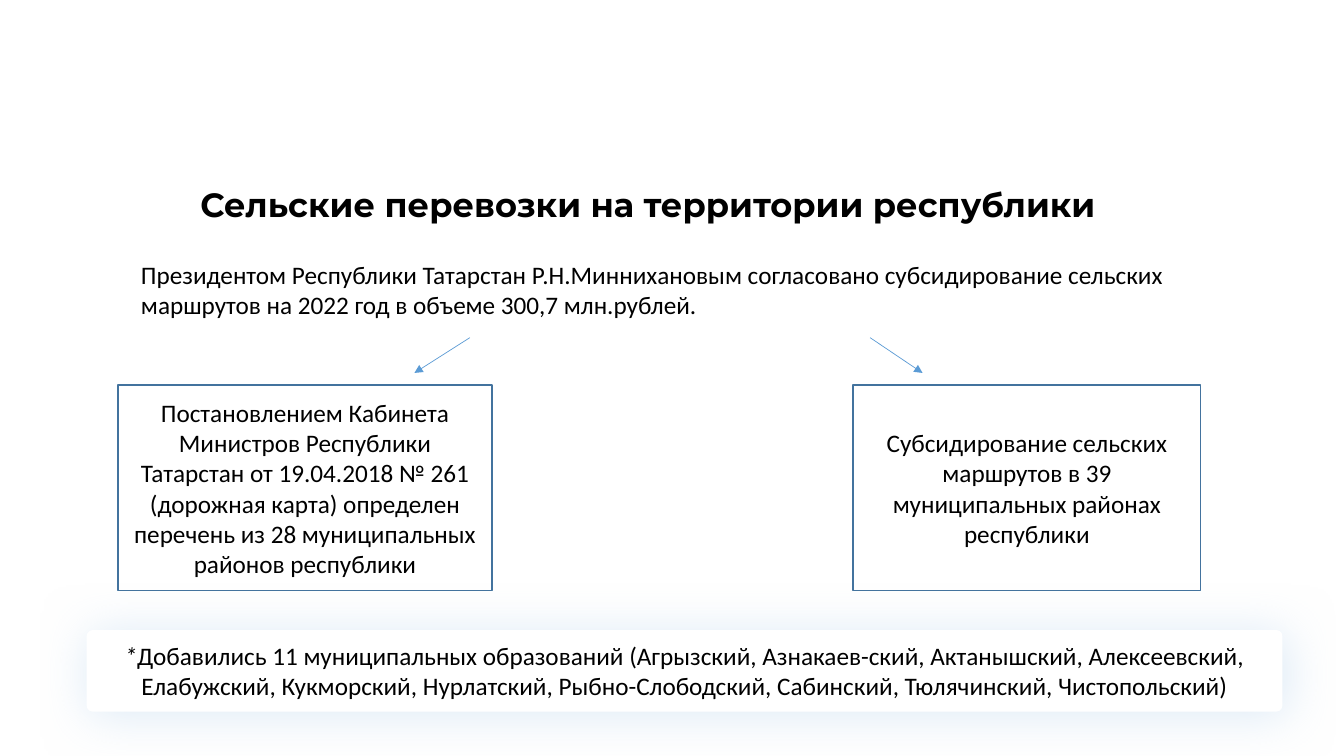
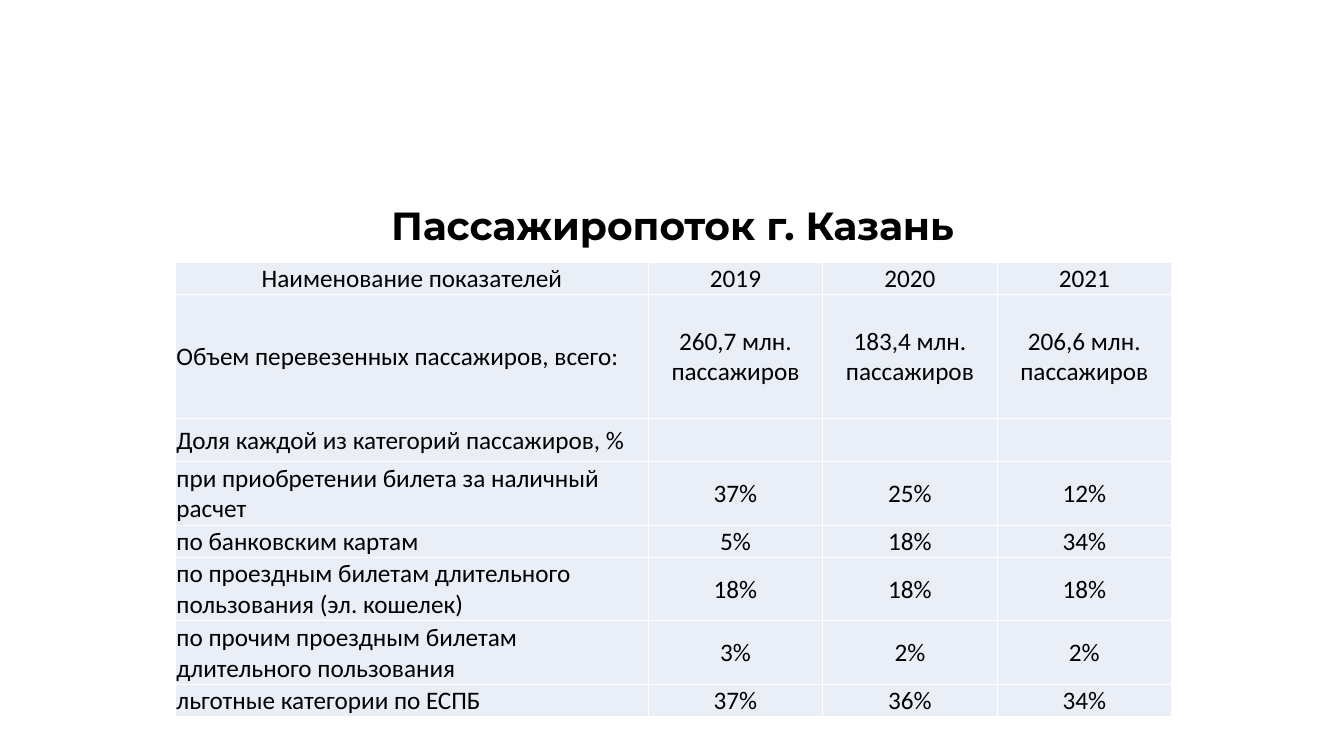
from lxml import etree
from pptx import Presentation
from pptx.dml.color import RGBColor
from pptx.enum.shapes import MSO_CONNECTOR, MSO_SHAPE
from pptx.enum.text import MSO_ANCHOR, PP_ALIGN
from pptx.oxml import parse_xml
from pptx.oxml.ns import nsdecls, qn
from pptx.util import Inches, Pt

# Shared style
BLACK, WHITE, BORDER, ARROW = "000000", "FFFFFF", "43739E", "5B9BD5"
CELL, GLOW = "EAEFF7", "BDD7EE"
BODY_FONT, TITLE_FONT = "Calibri", "Montserrat"

# Slide 1: rural transport
RURAL_TITLE = "Сельские перевозки на территории республики"
INTRO = ("Президентом Республики Татарстан Р.Н.Миннихановым согласовано "
         "субсидирование сельских маршрутов на 2022 год в объеме 300,7 млн.рублей.")
BOXES = [  # left, width, text
    (1.17, 3.71, "Постановлением Кабинета Министров Республики Татарстан от 19.04.2018 "
                 "№ 261 (дорожная карта) определен перечень из 28 муниципальных "
                 "районов республики"),
    (8.46, 3.45, "Субсидирование сельских маршрутов в 39 муниципальных районах республики"),
]
ARROWS = [(4.66, 4.11), (8.63, 9.15)]  # start x, end x
FOOTNOTE = ("Добавились 11 муниципальных образований (Агрызский, Азнакаев-ский, "
            "Актанышский, Алексеевский, Елабужский, Кукморский, Нурлатский, "
            "Рыбно-Слободский, Сабинский, Тюлячинский, Чистопольский)")

# Slide 2: passenger flow
FLOW_TITLE = "Пассажиропоток г. Казань"
COL_WIDTHS = [4.69, 1.73, 1.73, 1.73]
ROWS = [  # height, cells
    (0.32, ["Наименование показателей", "2019", "2020", "2021"]),
    (1.23, ["Объем перевезенных пассажиров, всего:", "260,7 млн. пассажиров",
            "183,4 млн. пассажиров", "206,6 млн. пассажиров"]),
    (0.43, ["Доля каждой из категорий пассажиров, %", "", "", ""]),
    (0.63, ["при приобретении билета за наличный расчет", "37%", "25%", "12%"]),
    (0.32, ["по банковским картам", "5%", "18%", "34%"]),
    (0.63, ["по проездным билетам длительного пользования (эл. кошелек)",
            "18%", "18%", "18%"]),
    (0.63, ["по прочим проездным билетам длительного пользования", "3%", "2%", "2%"]),
    (0.32, ["льготные категории по ЕСПБ", "37%", "36%", "34%"]),
]


def rgb(color):
    return RGBColor.from_string(color)


def write(p, text, size=18, font=BODY_FONT, bold=False, italic=False,
          align=PP_ALIGN.CENTER):
    p.alignment = align
    r = p.add_run()
    r.text = text
    r.font.size, r.font.name = Pt(size), font
    r.font.bold, r.font.italic = bold, italic
    r.font.color.rgb = rgb(BLACK)


def add_text(s, box, text, **fmt):
    tf = s.shapes.add_textbox(*map(Inches, box)).text_frame
    tf.word_wrap = True
    write(tf.paragraphs[0], text, **fmt)
    return tf


def add_title(s, box, text, size):
    return add_text(s, box, text, size=size, font=TITLE_FONT, bold=True)


def add_panel(s, kind, box, line=None):
    sp = s.shapes.add_shape(kind, *map(Inches, box))
    sp.shadow.inherit = False
    sp.fill.solid()
    sp.fill.fore_color.rgb = rgb(WHITE)
    if line:
        sp.line.color.rgb = rgb(line)
        sp.line.width = Pt(1)
    else:
        sp.line.fill.background()
    sp.text_frame.word_wrap = True
    sp.text_frame.vertical_anchor = MSO_ANCHOR.MIDDLE
    return sp


def add_glow(sp):
    effects = sp._element.spPr.find(qn("a:effectLst"))
    effects.append(parse_xml(
        f'<a:outerShdw {nsdecls("a")} blurRad="{Pt(36)}" dist="{Pt(3)}" dir="2700000" '
        f'algn="tl" rotWithShape="0"><a:srgbClr val="{GLOW}">'
        '<a:alpha val="51000"/></a:srgbClr></a:outerShdw>'))


def add_arrow(s, start, end):
    cn = s.shapes.add_connector(MSO_CONNECTOR.STRAIGHT, *map(Inches, start + end))
    cn.line.color.rgb = rgb(ARROW)
    cn.line.width = Pt(0.5)
    etree.SubElement(cn.line._get_or_add_ln(), qn("a:tailEnd"), type="triangle")
    etree.SubElement(cn._element.spPr, qn("a:effectLst"))


def style_cell(cell):
    tcPr = cell._tc.get_or_add_tcPr()
    for side in "LRTB":
        tcPr.append(parse_xml(
            f'<a:ln{side} {nsdecls("a")} w="{Pt(1)}"><a:solidFill>'
            f'<a:srgbClr val="{WHITE}"/></a:solidFill></a:ln{side}>'))
    cell.fill.solid()
    cell.fill.fore_color.rgb = rgb(CELL)
    cell.vertical_anchor = MSO_ANCHOR.MIDDLE
    cell.margin_left = cell.margin_right = cell.margin_top = Inches(0.01)
    cell.margin_bottom = 0


def build_rural(s):
    add_title(s, (0.93, 1.78, 10.99, 0.5), RURAL_TITLE, 24)
    for left, width, text in BOXES:
        sp = add_panel(s, MSO_SHAPE.RECTANGLE, (left, 3.82, width, 2.04), BORDER)
        write(sp.text_frame.paragraphs[0], text)
    for x1, x2 in ARROWS:
        add_arrow(s, (x1, 3.35), (x2, 3.7))
    add_text(s, (1.3, 2.52, 10.99, 0.71), INTRO, align=PP_ALIGN.LEFT)
    # Footnote panel
    sp = add_panel(s, MSO_SHAPE.ROUNDED_RECTANGLE, (0.86, 6.25, 11.86, 0.81))
    sp.adjustments[0] = 0.075
    add_glow(sp)
    p = sp.text_frame.paragraphs[0]
    write(p, "*", italic=True)
    write(p, FOOTNOTE)


def build_flow(s):
    tf = add_title(s, (0.92, 2, 11.5, 0.92), FLOW_TITLE, 28)
    tf.paragraphs[0].line_spacing = 0.9
    # Table of shares by year
    height = sum(h for h, _ in ROWS)
    table = s.shapes.add_table(len(ROWS), len(COL_WIDTHS), Inches(1.74), Inches(2.6),
                               Inches(sum(COL_WIDTHS)), Inches(height)).table
    for column, width in zip(table.columns, COL_WIDTHS):
        column.width = Inches(width)
    for i, (row_height, texts) in enumerate(ROWS):
        table.rows[i].height = Inches(row_height)
        for j, text in enumerate(texts):
            cell = table.cell(i, j)
            style_cell(cell)
            if text:
                align = PP_ALIGN.LEFT if i and j == 0 else PP_ALIGN.CENTER
                write(cell.text_frame.paragraphs[0], text, align=align)


def main():
    prs = Presentation()
    prs.slide_width, prs.slide_height = Inches(13.33), Inches(7.5)
    for build in (build_rural, build_flow):
        build(prs.slides.add_slide(prs.slide_layouts[6]))
    prs.save("out.pptx")


if __name__ == "__main__":
    main()
